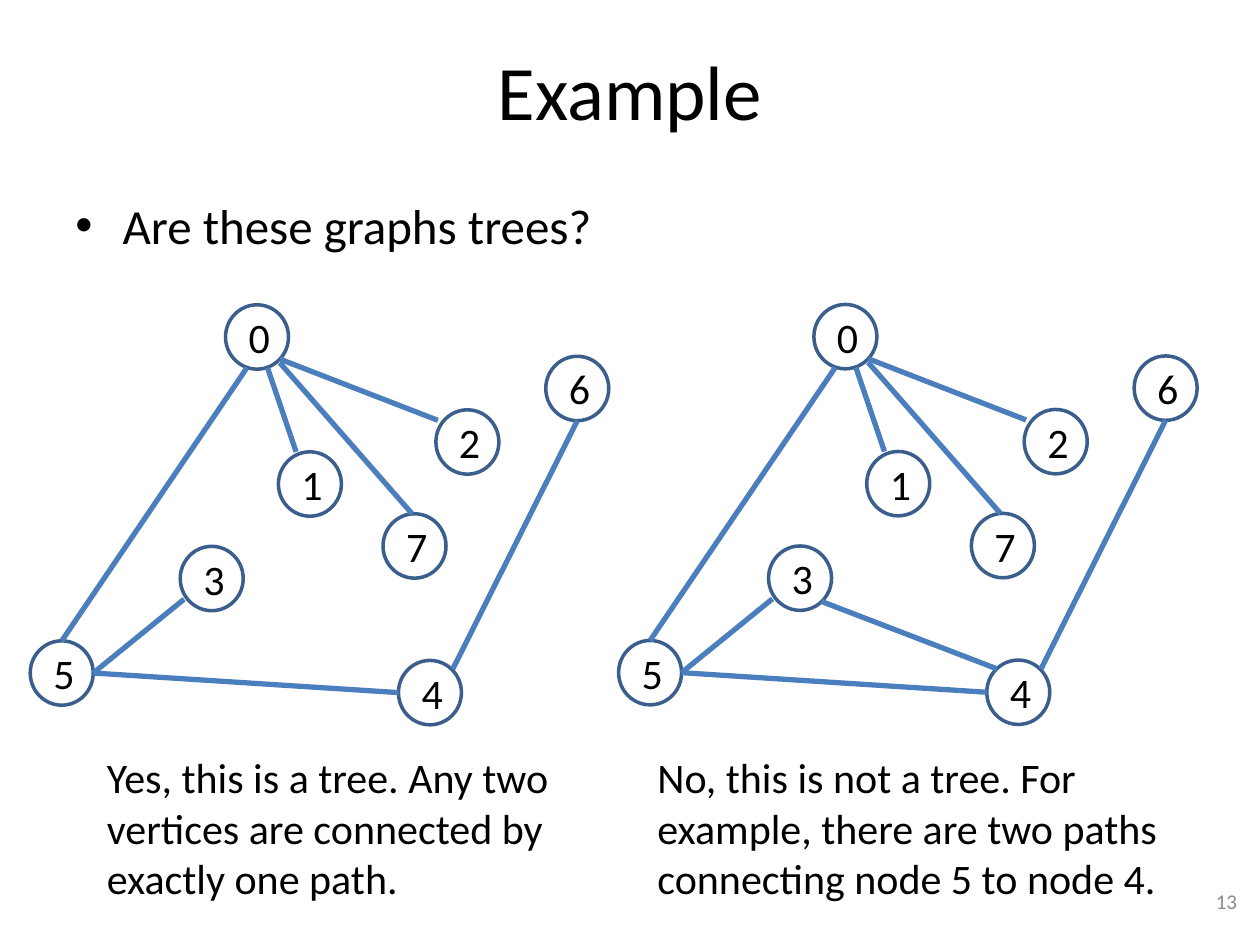
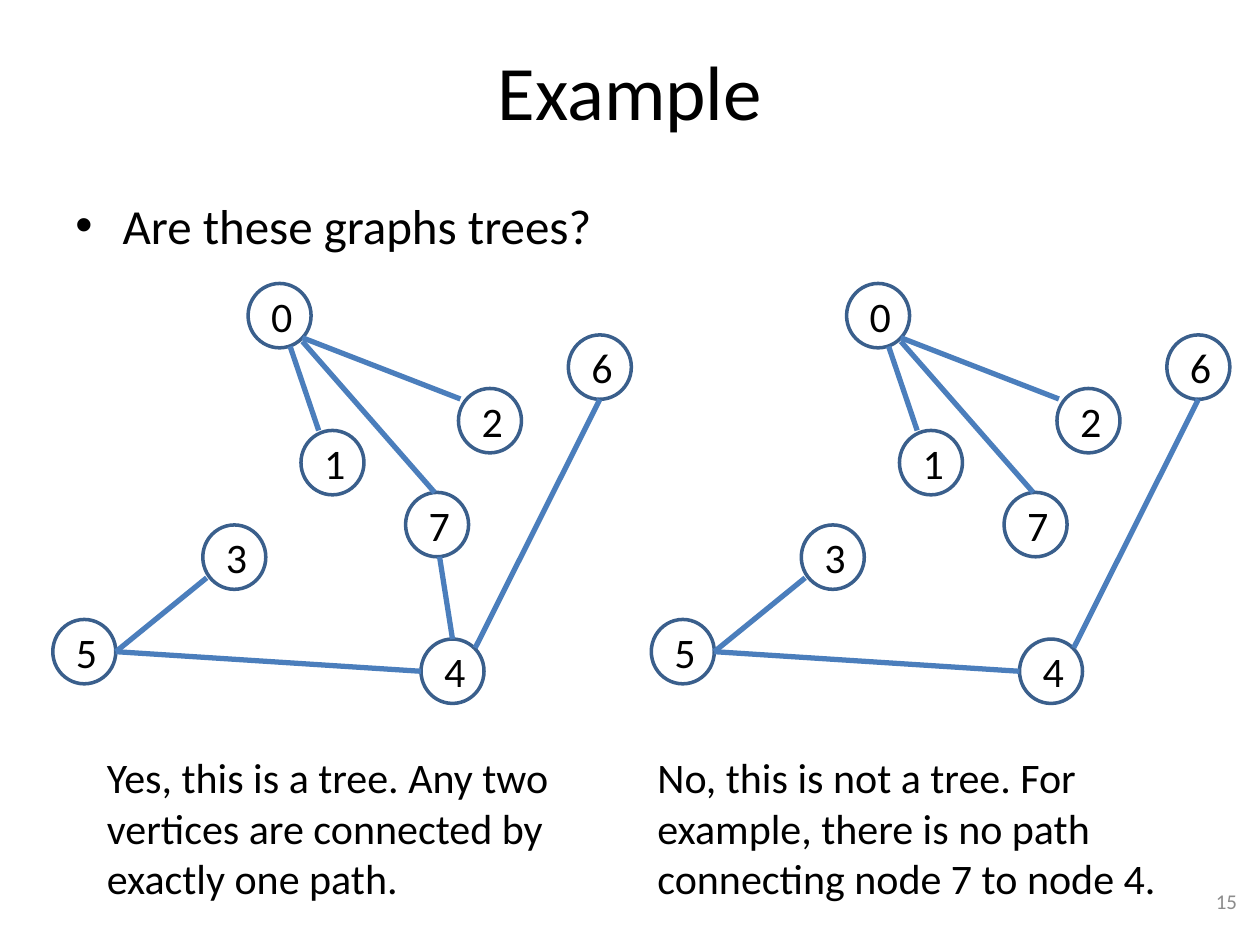
from dataclasses import dataclass
from lxml.etree import SubElement
from pptx import Presentation
from pptx.dml.color import RGBColor
from pptx.enum.shapes import MSO_CONNECTOR, MSO_SHAPE
from pptx.enum.text import MSO_ANCHOR, MSO_AUTO_SIZE, PP_ALIGN
from pptx.oxml.ns import qn
from pptx.util import Pt


@dataclass(frozen=True)
class Theme:
    """Colours, font and type sizes in points."""
    font: str = "Calibri"
    ink: str = "000000"
    grey: str = "8C8C8C"
    ring: str = "3A5F8C"
    edge: str = "4B7EBC"
    title: int = 44
    body: int = 28
    label: int = 24
    foot: int = 12


WIDE, HIGH = 36, 36.8
NODES = {
    "0": (111.6, 0), "1": (141.8, 84), "7": (201.6, 119.4), "2": (231.8, 60),
    "5": (0, 192), "3": (85.7, 138), "4": (210.4, 203.2), "6": (294.6, 29.4),
}
ENDS = {
    "02": ((31, 31), (1.1, 6)),
    "01": ((24, 36), (10.1, 0)),
    "05": ((12.2, 36), (WIDE / 2, 0)),
    "07": ((31, 33.1), (16.6, 0)),
    "53": ((WIDE, HIGH / 2), (2.2, 30.2)),
    "54": ((WIDE, HIGH / 2), (0, HIGH / 2)),
    "34": ((30.2, 31.7), (5.8, 5)),
    "74": ((19.4, HIGH), (WIDE / 2, 0)),
    "64": ((WIDE / 2, HIGH), (31, 5)),
}
YES = ["Yes, this is a tree. Any two", "vertices are connected by", "exactly one path."]
NO = "No, this is not a tree. For example, there "
CASES = [
    ("13", NO + "are two paths connecting node 5 to node 4.",
     (17.3, 174.2, "02 01 05 07 53 54 64"),
     (353.5, 174, "02 01 05 07 53 54 34 64")),
    ("15", NO + "is no path connecting node 7 to node 4.",
     (30.2, 162, "02 01 07 53 54 74 64"),
     (372.2, 162, "02 01 07 53 54 64")),
]


class Deck:
    """Holds the theme and the current slide and draws each kind of element."""

    def __init__(self, theme):
        """Start an empty deck."""
        self.theme = theme
        self.prs = Presentation()
        self.prs.slide_width, self.prs.slide_height = Pt(720), Pt(540)
        self.slide = None

    def text(self, home, box, lines, size, hue=None, align=PP_ALIGN.LEFT,
             anchor=MSO_ANCHOR.TOP, wrap=True, grow=False):
        """Add a text box with one paragraph per line."""
        frame = home.add_textbox(*map(Pt, box)).text_frame
        frame.word_wrap = wrap
        frame.vertical_anchor = anchor
        frame.auto_size = MSO_AUTO_SIZE.SHAPE_TO_FIT_TEXT if grow else MSO_AUTO_SIZE.NONE
        for i, line in enumerate(lines):
            para = frame.add_paragraph() if i else frame.paragraphs[0]
            para.alignment = align
            run = para.add_run()
            run.text = line
            run.font.name = self.theme.font
            run.font.size = Pt(size)
            run.font.color.rgb = RGBColor.from_string(hue or self.theme.ink)
        return frame

    def page(self, title, point, number):
        """Add a slide with its title, bullet and page number."""
        look = self.theme
        self.slide = self.prs.slides.add_slide(self.prs.slide_layouts[6])
        home = self.slide.shapes
        self.text(home, (36, 6, 648, 90), [title], look.title,
                  align=PP_ALIGN.CENTER, anchor=MSO_ANCHOR.MIDDLE)
        self.bullet(self.text(home, (36, 108, 648, 396), [point], look.body))
        self.text(home, (546, 500.4, 168, 28.8), [number], look.foot, look.grey,
                  PP_ALIGN.RIGHT, MSO_ANCHOR.MIDDLE)

    def bullet(self, frame):
        """Give the first paragraph a hanging bullet."""
        para = frame.paragraphs[0]
        para.space_before = Pt(self.theme.body * 0.2)
        props = para._p.get_or_add_pPr()
        props.set("marL", str(Pt(27)))
        props.set("indent", str(Pt(-27)))
        SubElement(props, qn("a:buFont")).set("typeface", "Arial")
        SubElement(props, qn("a:buChar")).set("char", "•")

    def node(self, home, name, x, y):
        """Draw a ring with its label."""
        ring = home.add_shape(MSO_SHAPE.OVAL, Pt(x), Pt(y), Pt(WIDE), Pt(HIGH))
        ring.shadow.inherit = False
        ring.fill.background()
        ring.line.color.rgb = RGBColor.from_string(self.theme.ring)
        ring.line.width = Pt(2)
        self.text(home, (x, y + 0.3, 33.1, 36), [" " + name], self.theme.label,
                  align=PP_ALIGN.CENTER, grow=True)

    def edge(self, home, start, end):
        """Draw a straight edge between two points."""
        line = home.add_connector(MSO_CONNECTOR.STRAIGHT, *map(Pt, start + end))
        line.line.color.rgb = RGBColor.from_string(self.theme.edge)
        line.line.width = Pt(3)
        SubElement(line._element.spPr, qn("a:effectLst"))

    def graph(self, left, top, edges):
        """Draw all nodes and the named edges as one group."""
        home = self.slide.shapes.add_group_shape().shapes
        spots = {name: (left + x, top + y) for name, (x, y) in NODES.items()}
        for name, spot in spots.items():
            self.node(home, name, *spot)
        for pair in edges.split():
            start, end = (
                (spots[name][0] + dx, spots[name][1] + dy)
                for name, (dx, dy) in zip(pair, ENDS[pair])
            )
            self.edge(home, start, end)

    def notes(self, yes, no):
        """Place the two answers under the graphs."""
        home, size = self.slide.shapes, self.theme.label
        self.text(home, (54, 426, 274.3, 94.5), yes, size, wrap=False, grow=True)
        self.text(home, (368.6, 426, 309, 94.5), [no], size, grow=True)


def main():
    """Build both slides and save them."""
    deck = Deck(Theme())
    for number, no, tree, other in CASES:
        deck.page("Example", "Are these graphs trees?", number)
        deck.graph(*other)
        deck.graph(*tree)
        deck.notes(YES, no)
    deck.prs.save("out.pptx")


if __name__ == "__main__":
    main()
